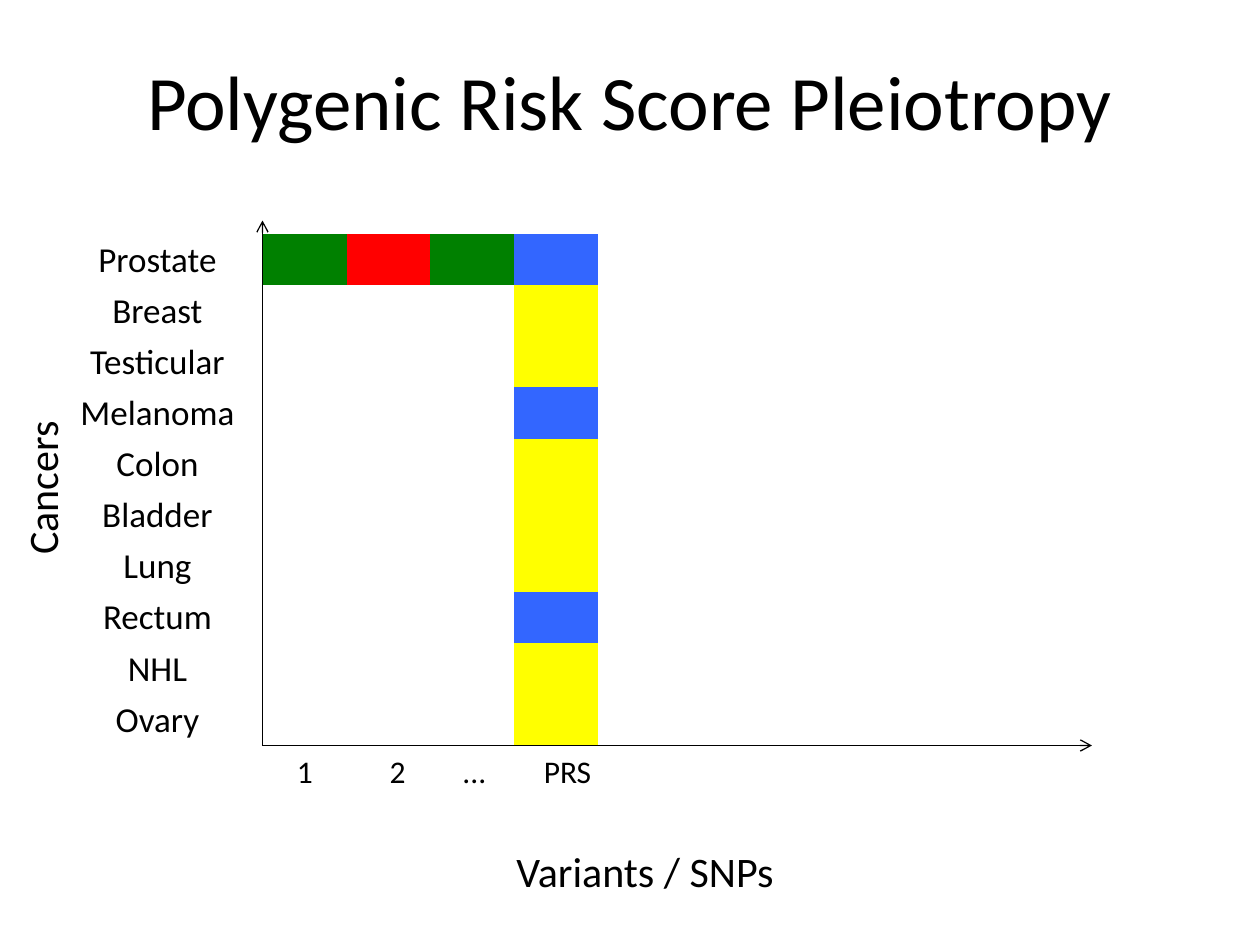
from lxml.etree import SubElement
from pptx import Presentation
from pptx.dml.color import RGBColor as Rgb
from pptx.enum.shapes import MSO_CONNECTOR as Connector
from pptx.enum.text import MSO_ANCHOR as Anchor, MSO_AUTO_SIZE as AutoSize, PP_ALIGN as Align
from pptx.oxml.ns import qn
from pptx.util import Inches, Pt

SLIDE_WIDTH, SLIDE_HEIGHT = Inches(10), Inches(7.5)
GRID_COLUMNS, GRID_ROWS = 24, 18
COLORS = {"ink": "000000", "paper": "FFFFFF", "G": "008000", "R": "FF0000",
          "B": "3366FF", "Y": "FFFF00", "W": "FFFFFF"}
PLAIN_TABLE = "{2D5ABB26-0587-4C30-8999-92F81FD0307C}"
CANCERS = ["Prostate", "Breast", "Testicular", "Melanoma", "Colon",
           "Bladder", "Lung", "Rectum", "NHL", "Ovary"]
VARIANTS = ["1", "2", "...", "PRS"]
VARIANT_COLUMNS = [1.77, 1.77, 1.15, 2.4]
PRS_HITS = {"Prostate", "Melanoma", "Rectum"}
TIGHT = {"margin_left": Inches(0.01), "margin_right": Inches(0.01),
         "margin_top": Inches(0.01), "margin_bottom": 0,
         "vertical_anchor": Anchor.MIDDLE}


def across(columns):
    """Return the length of a number of grid columns."""
    return round(SLIDE_WIDTH * columns / GRID_COLUMNS)


def down(rows):
    """Return the length of a number of grid rows."""
    return round(SLIDE_HEIGHT * rows / GRID_ROWS)


def place(box):
    """Turn a grid box into left, top, width and height."""
    left, top, width, height = box
    return across(left), down(top), across(width), down(height)


def apply_format(target, values):
    """Set every attribute named in a dict of format values."""
    for name, value in values.items():
        setattr(target, name, value)


def write(frame, wording, size, align):
    """Write one formatted line into a text frame."""
    line = frame.paragraphs[0]
    line.alignment = align
    run = line.add_run()
    run.text = wording
    apply_format(run.font, {"name": "Calibri", "size": Pt(size)})
    run.font.color.rgb = Rgb.from_string(COLORS["ink"])


def add_plain_table(slide, box, row_count, widths):
    """Add a table without style whose column widths are in grid columns."""
    frame = slide.shapes.add_table(row_count, len(widths), *place(box))
    frame.element.find(".//" + qn("a:tableStyleId")).text = PLAIN_TABLE
    table = frame.table
    apply_format(table, {"first_row": False, "horz_banding": False})
    for column, width in zip(table.columns, widths):
        column.width = across(width)
    return table


def fill_cell(cell, color):
    """Paint a cell, or leave it clear when there is no colour."""
    if color:
        cell.fill.solid()
        cell.fill.fore_color.rgb = Rgb.from_string(COLORS[color])
    else:
        cell.fill.background()


def add_heat_map(slide, box):
    """Show the single-variant row and the risk score column."""
    column_count = 10
    table = add_plain_table(slide, box, len(CANCERS), [box[2] / column_count] * column_count)
    for row, cancer in enumerate(CANCERS):
        variants = "GRG" if row == 0 else "WWW"
        score = "B" if cancer in PRS_HITS else "Y"
        colors = [*variants, score, "W"] + [None] * 5
        for column, color in enumerate(colors):
            cell = table.cell(row, column)
            apply_format(cell, TIGHT)
            fill_cell(cell, color)


def add_cancer_labels(slide, box):
    """List the cancers beside the heat map."""
    table = add_plain_table(slide, box, len(CANCERS), [box[2]])
    for row, cancer in enumerate(CANCERS):
        cell = table.cell(row, 0)
        apply_format(cell, TIGHT)
        fill_cell(cell, "paper")
        write(cell.text_frame, cancer, 20, Align.CENTER)


def add_variant_labels(slide, box):
    """Name the variants below the heat map."""
    table = add_plain_table(slide, box, 1, VARIANT_COLUMNS)
    for column, variant in enumerate(VARIANTS):
        cell = table.cell(0, column)
        fill_cell(cell, None)
        write(cell.text_frame, variant, 18, Align.CENTER)


def add_axes(slide, box):
    """Draw both axes as arrows from the lower left corner of the box."""
    left, top, width, height = place(box)
    bottom = top + height
    for end in ((left + width, bottom), (left, top)):
        axis = slide.shapes.add_connector(Connector.STRAIGHT, left, bottom, *end)
        axis.line.width = Pt(0.75)
        axis.line.color.rgb = Rgb.from_string(COLORS["ink"])
        SubElement(axis.line._get_or_add_ln(), qn("a:tailEnd"), type="arrow")
        SubElement(axis.element.spPr, qn("a:effectLst"))


def add_axis_title(slide, box, wording, rotation=0):
    """Add the title of one axis."""
    title = slide.shapes.add_textbox(*place(box))
    title.rotation = rotation
    apply_format(title.text_frame, {"word_wrap": False, "auto_size": AutoSize.SHAPE_TO_FIT_TEXT})
    write(title.text_frame, wording, 24, Align.LEFT)


def add_heading(slide, box, wording):
    """Add the slide heading."""
    heading = slide.shapes.add_textbox(*place(box))
    apply_format(heading.text_frame, {"word_wrap": True, "vertical_anchor": Anchor.MIDDLE})
    write(heading.text_frame, wording, 44, Align.CENTER)


def main():
    """Build and save the slide."""
    deck = Presentation()
    apply_format(deck, {"slide_width": SLIDE_WIDTH, "slide_height": SLIDE_HEIGHT})
    slide = deck.slides.add_slide(deck.slide_layouts[6])
    add_heat_map(slide, (5, 4.46, 16, 9.74))
    add_variant_labels(slide, (4.92, 14.23, sum(VARIANT_COLUMNS), 0.97))
    add_cancer_labels(slide, (1, 4.46, 4, 9.74))
    add_axes(slide, (5, 4.2, 15.8, 10))
    add_axis_title(slide, (-0.96, 8.45, 3.5, 1.2), "Cancers", 270)
    add_axis_title(slide, (9.6, 15.98, 6.12, 1.2), "Variants / SNPs")
    add_heading(slide, (0, 0.4, GRID_COLUMNS, 3), "Polygenic Risk Score Pleiotropy")
    deck.save("out.pptx")


if __name__ == "__main__":
    main()
